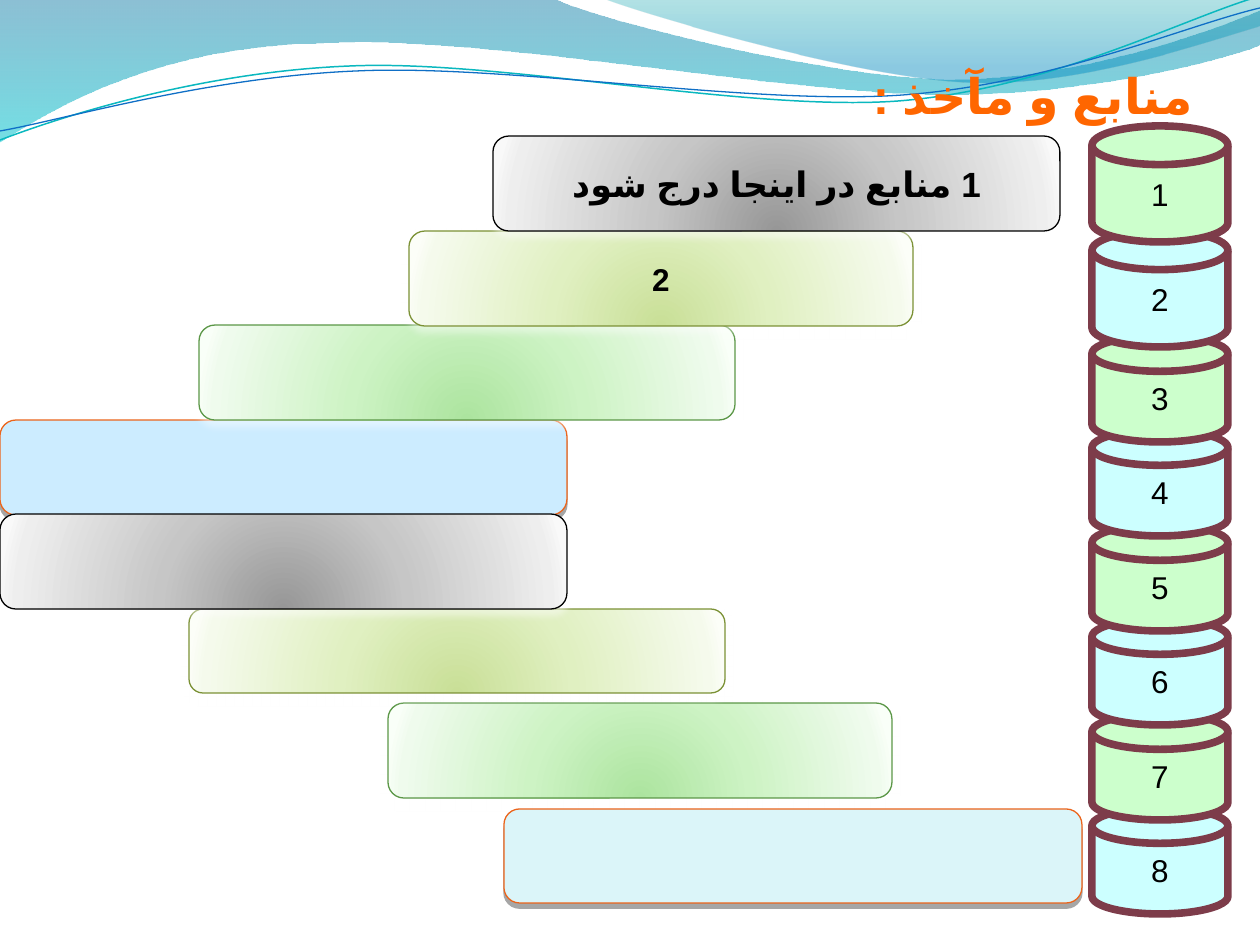
from dataclasses import dataclass

from lxml import etree
from pptx import Presentation
from pptx import util as u
from pptx.dml.color import RGBColor
from pptx.enum import shapes, text
from pptx.oxml.ns import qn

PX = 914400 / 126


@dataclass(frozen=True)
class BarStyle:
    line: str
    fill: str = ""
    stops: tuple = ()
    shadow: str = "FFFFFF"
    opacity: int = 48
    blur: float = 4.5


class Theme:
    ink = "000000"
    title = "FF6600"
    title_font, body_font, number_font = "Cambria", "Arial", "DejaVu Sans Mono"
    title_size, source_size, number_size = 28, 20, 18
    disk_fills = ("CCFFCC", "CCFFFF")
    disk_line, disk_weight = "7D3C4A", 4.33
    bar_weight = 0.75
    deep_wave = ((0, "0074A1", 45), (100, "00C6CF", 55))
    light_wave = ((0, "00A1A9", 30), (80, "008BBF", 45))
    teal_strand, blue_strand = ("0AB8BF", 0.85), ("0F6FC6", 0.75)
    gray = BarStyle("000000", stops=(
        (0, "979797"), (43, "C6C6C6"), (93, "EEEEEE"), (100, "F9F9F9")))
    olive = BarStyle("7B9135", stops=(
        (0, "C9DF97"), (43, "E0F0C1"), (93, "F5FAEC"), (100, "FCFEF8")))
    green = BarStyle("5B9747", stops=(
        (0, "ACE49F"), (43, "CDF3C4"), (93, "EFFBED"), (100, "F9FFF8")))
    sky = BarStyle("EB641B", "CCECFF", shadow="000000", opacity=35, blur=0)
    aqua = BarStyle("EB641B", "DBF5F9", shadow="000000", opacity=35, blur=0)


DEEP_WAVE = [(0, 0), (554, -1), (600, 21, 837, 79, 955, 79),
             (1075, 79, 1207, 33, 1260, 11), (1261, 45),
             (1238, 55, 1096, 96, 940, 94), (784, 94, 481, 35, 324, 43),
             (163, 45, 58, 105, -1, 142), (0, 0)]
LIGHT_WAVE = [(604, -1), (641, 14, 859, 78, 969, 82),
              (1079, 87, 1211, 40, 1260, 26), (1260, 0), (604, -1)]
TEAL_STRAND = [(0, 140), (60, 117, 199, 72, 349, 66),
               (498, 59, 747, 112, 898, 101), (1050, 89, 1182, 19, 1257, -3)]
BLUE_STRAND = [(0, 131), (59, 121, 207, 77, 357, 71),
               (508, 64, 752, 106, 903, 95), (1053, 84, 1184, 26, 1260, 8)]

BARS = [
    (0, 420, 567, 95, Theme.sky, "", 0),
    (199, 325, 536, 95, Theme.green, "", 0),
    (409, 231, 504, 95, Theme.olive, "2", Theme.number_size),
    (493, 136, 567, 95, Theme.gray, "1 منابع در اینجا درج شود", Theme.source_size),
    (388, 703, 504, 95, Theme.green, "", 0),
    (189, 609, 536, 84, Theme.olive, "", 0),
    (0, 514, 567, 95, Theme.gray, "", 0),
    (504, 809, 578, 94, Theme.aqua, "", 0),
]


def px(*lengths):
    return [u.Emu(round(length * PX)) for length in lengths]


def add_node(parent, tag, **attributes):
    values = {name: str(value) for name, value in attributes.items()}
    return etree.SubElement(parent, qn(tag), values)


def add_color(parent, color, opacity=100):
    node = add_node(parent, "a:srgbClr", val=color)
    if opacity < 100:
        add_node(node, "a:alpha", val=opacity * 1000)


def paint(shape, color):
    shape.fill.solid()
    shape.fill.fore_color.rgb = RGBColor.from_string(color)


def outline(shape, color, weight):
    shape.line.color.rgb = RGBColor.from_string(color)
    shape.line.width = u.Pt(weight)


def paint_gradient(shape, stops, radial=False):
    shape.fill.gradient()
    gradient = shape._element.spPr.find(qn("a:gradFill"))
    gradient.clear()
    stop_list = add_node(gradient, "a:gsLst")
    for position, *color in stops:
        add_color(add_node(stop_list, "a:gs", pos=position * 1000), *color)
    if radial:
        circle = add_node(gradient, "a:path", path="circle")
        add_node(circle, "a:fillToRect", l=50000, t=130000, r=50000, b=-30000)
    else:
        add_node(gradient, "a:lin", ang=5400000, scaled=1)


def cast_shadow(shape, style):
    effects = shape._element.spPr.find(qn("a:effectLst"))
    shadow = add_node(effects, "a:outerShdw", blurRad=u.Pt(style.blur),
                      dist=u.Pt(3), dir=5400000, rotWithShape=0)
    add_color(shadow, style.shadow, style.opacity)


def write(shape, words, size, font, color=Theme.ink, bold=False,
          align=text.PP_ALIGN.CENTER):
    shape.text_frame.text = words
    paragraph = shape.text_frame.paragraphs[0]
    paragraph.alignment = align
    paragraph._p.get_or_add_pPr().set("rtl", "1")
    run = paragraph.runs[0]
    run.font.size, run.font.bold, run.font.name = u.Pt(size), bold, font
    run.font.color.rgb = RGBColor.from_string(color)
    properties = run._r.get_or_add_rPr()
    properties.set("lang", "fa-IR")
    add_node(properties, "a:cs", typeface=Theme.body_font)


def add_curve(slide, segments, closed):
    start, *ends = [tuple(px(*segment[-2:])) for segment in segments]
    builder = slide.shapes.build_freeform(*start)
    builder.add_line_segments(ends, close=closed)
    curve = builder.convert_to_shape()
    curve.shadow.inherit = False
    contour = next(curve._element.spPr.iter(qn("a:path")))
    for step in list(contour):
        contour.remove(step)
    for index, segment in enumerate(segments):
        tag = "a:cubicBezTo" if len(segment) == 6 else "a:lnTo"
        step = add_node(contour, tag if index else "a:moveTo")
        lengths = px(*segment)
        for x, y in zip(lengths[::2], lengths[1::2]):
            add_node(step, "a:pt", x=x - curve.left, y=y - curve.top)
    if closed:
        add_node(contour, "a:close")
    return curve


def add_wave(slide, segments, stops):
    wave = add_curve(slide, segments, True)
    paint_gradient(wave, stops)
    wave.line.fill.background()


def add_strand(slide, segments, stroke):
    strand = add_curve(slide, segments, False)
    strand.fill.background()
    outline(strand, *stroke)


def add_disk(slide, number):
    top, height = 126 + 105 * (number - 1), 116
    if number > 2:
        top, height = 336 + 189 * (number - 3) // 2, 106
    disk = slide.shapes.add_shape(shapes.MSO_SHAPE.FLOWCHART_MAGNETIC_DISK,
                                  *px(1092, top, 136, height))
    disk.shadow.inherit = False
    paint(disk, Theme.disk_fills[(number - 1) % 2])
    outline(disk, Theme.disk_line, Theme.disk_weight)
    disk.text_frame.vertical_anchor = text.MSO_ANCHOR.MIDDLE
    write(disk, str(number), Theme.number_size, Theme.number_font)


def add_bar(slide, left, top, width, height, style, words, size):
    bar = slide.shapes.add_shape(shapes.MSO_SHAPE.ROUNDED_RECTANGLE,
                                 *px(left, top, width, height))
    bar.shadow.inherit = False
    if style.stops:
        paint_gradient(bar, style.stops, radial=True)
    else:
        paint(bar, style.fill)
    outline(bar, style.line, Theme.bar_weight)
    cast_shadow(bar, style)
    if words:
        bar.text_frame.vertical_anchor = text.MSO_ANCHOR.MIDDLE
        write(bar, words, size, Theme.body_font, bold=True)


def add_title(slide, words):
    title = slide.shapes.add_textbox(*px(659, 59, 546, 72))
    title.text_frame.word_wrap = True
    write(title, words, Theme.title_size, Theme.title_font, Theme.title,
          bold=True, align=text.PP_ALIGN.RIGHT)


def main():
    deck = Presentation()
    deck.slide_width, deck.slide_height = px(1260, 945)
    slide = deck.slides.add_slide(deck.slide_layouts[6])
    add_wave(slide, DEEP_WAVE, Theme.deep_wave)
    add_wave(slide, LIGHT_WAVE, Theme.light_wave)
    add_strand(slide, TEAL_STRAND, Theme.teal_strand)
    add_strand(slide, BLUE_STRAND, Theme.blue_strand)
    for number in range(8, 0, -1):
        add_disk(slide, number)
    for bar in BARS:
        add_bar(slide, *bar)
    add_title(slide, "منابع و مآخذ :")
    deck.save("out.pptx")


if __name__ == "__main__":
    main()
